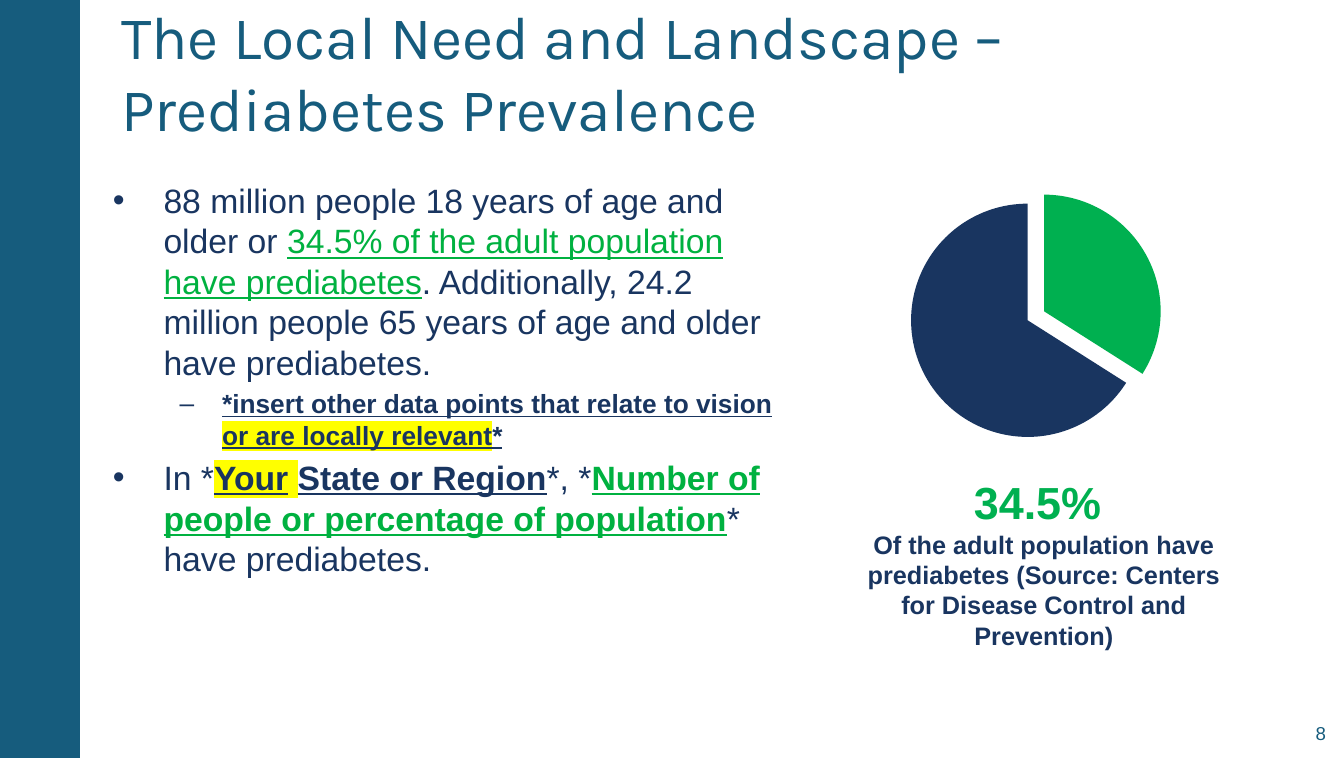
from pptx import Presentation
from pptx.chart.data import CategoryChartData
from pptx.dml.color import RGBColor
from pptx.enum.chart import XL_CHART_TYPE
from pptx.enum.shapes import MSO_SHAPE
from pptx.enum.text import MSO_ANCHOR, MSO_AUTO_SIZE, PP_ALIGN
from pptx.oxml import parse_xml
from pptx.oxml.ns import nsdecls, qn
from pptx.util import Inches, Pt

TEAL, NAVY, LEAF, GREEN = "165C7D", "193560", "00B140", "00B050"
YELLOW = "FFFF00"


def tint(code):
    return RGBColor.from_string(code)


class Deck:
    font = "Arial"

    def __init__(self, wide, high):
        self.prs = Presentation()
        self.prs.slide_width, self.prs.slide_height = Inches(wide), Inches(high)
        self.slide = self.prs.slides.add_slide(self.prs.slide_layouts[5])

    def area(self, left, top, width, height):
        """Turn percentages of the slide into lengths."""
        wide, high = self.prs.slide_width, self.prs.slide_height
        return [int(share * size / 100) for share, size in
                zip((left, top, width, height), (wide, high, wide, high))]

    def bar(self, area, color):
        box = self.slide.shapes.add_shape(MSO_SHAPE.RECTANGLE, *self.area(*area))
        box.shadow.inherit = False
        box.fill.solid()
        box.fill.fore_color.rgb = tint(color)
        box.line.fill.background()

    def run(self, par, text, size, color, font=None, bold=False, under=False, mark=None):
        run = par.add_run()
        run.text = text
        face = run.font
        face.name, face.size = font or self.font, Pt(size)
        face.bold, face.underline = bold, under
        face.color.rgb = tint(color)
        if mark:
            fill = run._r.get_or_add_rPr().find(qn("a:solidFill"))
            fill.addnext(parse_xml(f'<a:highlight {nsdecls("a")}>'
                                   f'<a:srgbClr val="{mark}"/></a:highlight>'))

    def title(self, area, text, size, color, font):
        box = self.slide.shapes.title
        box.left, box.top, box.width, box.height = self.area(*area)
        frame = box.text_frame
        frame.auto_size, frame.word_wrap = MSO_AUTO_SIZE.NONE, True
        frame.vertical_anchor = MSO_ANCHOR.MIDDLE
        par = frame.paragraphs[0]
        par.alignment = PP_ALIGN.LEFT
        self.run(par, text, size, color, font)

    def text(self, area, anchor=MSO_ANCHOR.TOP, inset=0.1):
        frame = self.slide.shapes.add_textbox(*self.area(*area)).text_frame
        frame.word_wrap, frame.vertical_anchor = True, anchor
        frame.margin_left = frame.margin_right = Inches(inset)
        return frame

    def par(self, frame, runs, size, align=PP_ALIGN.LEFT):
        par = frame.paragraphs[0]
        if par.runs:
            par = frame.add_paragraph()
        par.alignment = align
        for words, style in runs:
            self.run(par, words, size, **style)
        return par

    def bullet(self, frame, runs, size, sign, indent, hang, level=0):
        par = self.par(frame, runs, size)
        par.level, par.space_before = level, Pt(size * 0.2)
        props = par._p.get_or_add_pPr()
        props.set("marL", str(Inches(indent)))
        props.set("indent", str(-Inches(hang)))
        props.append(parse_xml(f'<a:buFont {nsdecls("a")} typeface="{self.font}"/>'))
        props.append(parse_xml(f'<a:buChar {nsdecls("a")} char="{sign}"/>'))

    def pie(self, area, values, colors, burst):
        data = CategoryChartData()
        data.categories = [str(n + 1) for n in range(len(values))]
        data.add_series("Series 1", values)
        chart = self.slide.shapes.add_chart(
            XL_CHART_TYPE.PIE, *self.area(*area), data).chart
        chart.has_legend = chart.has_title = False
        chart.font.name, chart.font.size = self.font, Pt(10)
        chart.font.color.rgb = tint("000000")
        plot = chart.plots[0]
        plot.vary_by_categories = True
        series = plot.series[0]
        for n, color in enumerate(colors):
            fill = series.points[n].format.fill
            fill.solid()
            fill.fore_color.rgb = tint(color)
        # Pull the first slice out
        first = series._element.find(qn("c:dPt"))
        first.find(qn("c:spPr")).addprevious(
            parse_xml(f'<c:explosion {nsdecls("c")} val="{burst}"/>'))
        # Centre the plot with a margin
        field = chart._chartSpace.chart.plotArea
        old = field.find(qn("c:layout"))
        if old is not None:
            field.remove(old)
        spots = "".join(f'<c:{key} val="{val}"/>' for key, val in (
            ("layoutTarget", "inner"), ("xMode", "edge"), ("yMode", "edge"),
            ("x", 0.11), ("y", 0.11), ("w", 0.78), ("h", 0.78)))
        field.insert(0, parse_xml(f'<c:layout {nsdecls("c")}><c:manualLayout>'
                                  f'{spots}</c:manualLayout></c:layout>'))


def main():
    deck = Deck(13.3, 7.5)
    plain = dict(color=NAVY)
    strong = dict(color=NAVY, bold=True)
    key = dict(strong, under=True)

    # Side bar and title
    deck.bar((0, 0, 5.94, 100), TEAL)
    deck.title((8.27, 3.73, 86.69, 11.33),
               "The Local Need and Landscape – Prediabetes Prevalence", 43.1, TEAL, "Karla")

    # Pie and its caption
    deck.pie((63.01, 22.53, 26.92, 39.47), (34, 66), (GREEN, NAVY), 16)
    note = deck.text((64.21, 62, 26.92, 26.27), inset=0.04)
    deck.par(note, [("34.5% ", dict(color=GREEN, bold=True))], 32, PP_ALIGN.CENTER)
    deck.par(note, [("Of the adult population have prediabetes (Source: Centers "
                     "for Disease Control and Prevention)", strong)], 18, PP_ALIGN.CENTER)

    # Bullets
    body = deck.text((7.67, 23.07, 50.98, 76.93))
    deck.bullet(body, [
        ("88 million people 18 years of age and older or ", plain),
        ("34.5% of the adult population have prediabetes", dict(color=LEAF, under=True)),
        (". Additionally, 24.2 million people 65 years of age and older "
         "have prediabetes.", plain)], 24, "•", 0.5, 0.5)
    deck.bullet(body, [
        ("*insert other data points that relate to vision ", key),
        ("or are locally relevant", dict(key, mark=YELLOW)),
        ("*", key)], 18.7, "–", 1.08, 0.42, 1)
    deck.bullet(body, [
        ("In *", plain),
        ("Your", dict(key, mark=YELLOW)),
        (" ", dict(strong, mark=YELLOW)),
        ("State or Region", key),
        ("*, *", plain),
        ("Number of people or percentage of population", dict(key, color=LEAF)),
        ("* have prediabetes.", plain)], 24, "•", 0.5, 0.5)

    # Page number
    page = deck.text((90.15, 94, 9.25, 5.33), MSO_ANCHOR.MIDDLE)
    deck.par(page, [("8", dict(color=TEAL))], 13.3, PP_ALIGN.RIGHT)

    deck.prs.save("out.pptx")


if __name__ == "__main__":
    main()
